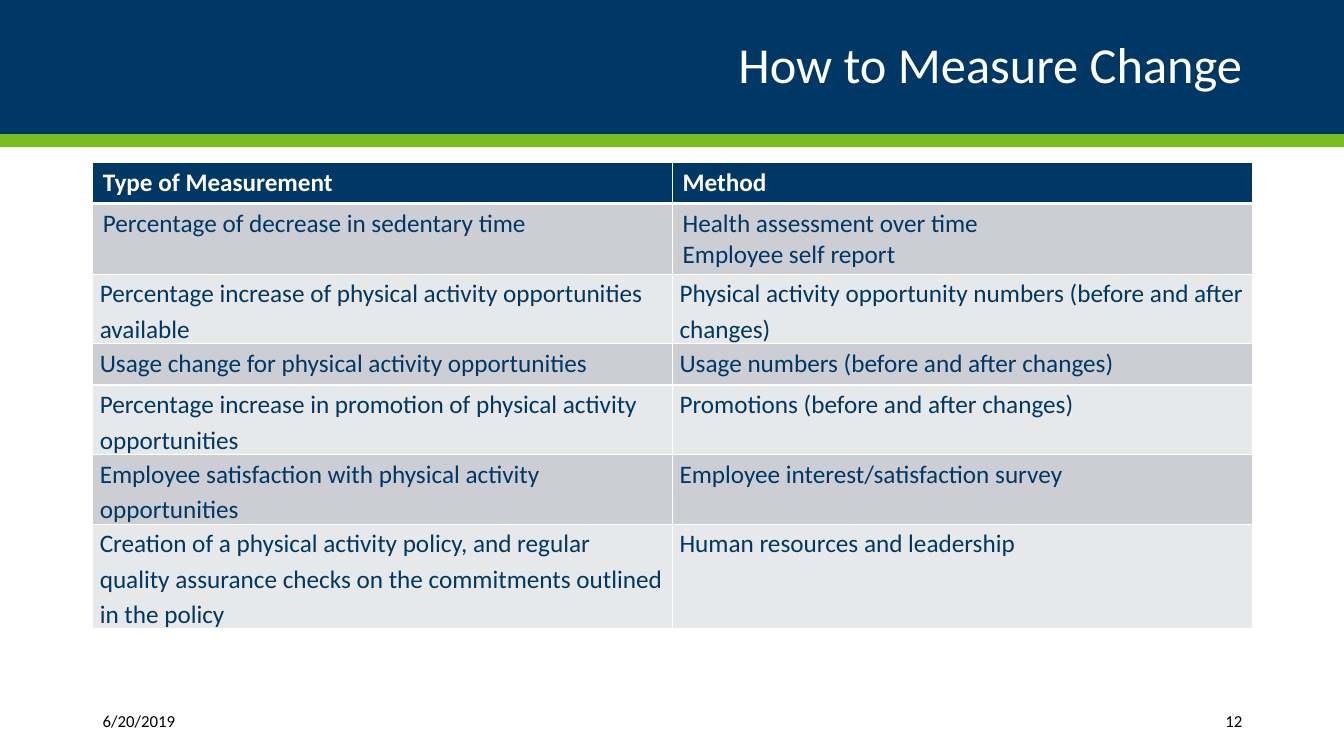
from lxml.etree import SubElement
from pptx import Presentation
from pptx.dml.color import RGBColor
from pptx.enum.shapes import MSO_SHAPE
from pptx.enum.text import MSO_ANCHOR, PP_ALIGN
from pptx.oxml.ns import qn
from pptx.util import Inches, Pt

COLORS = {
    "navy": "003865", "green": "78BE21", "white": "FFFFFF", "black": "000000",
    "band_dark": "CCCED3", "band_light": "E7E8EA",
}
FONT = "Calibri"
MARGIN, CONTENT_WIDTH = 0.92, 11.5
ROW_HEIGHT = 0.41

HEADINGS = ("Type of Measurement", "Method")
MEASURES = [
    ("Percentage of decrease in sedentary time",
     "Health assessment over time\nEmployee self report"),
    ("Percentage increase of physical activity opportunities available",
     "Physical activity opportunity numbers (before and after changes)"),
    ("Usage change for physical activity opportunities",
     "Usage numbers (before and after changes)"),
    ("Percentage increase in promotion of physical activity opportunities",
     "Promotions (before and after changes)"),
    ("Employee satisfaction with physical activity opportunities",
     "Employee interest/satisfaction survey"),
    ("Creation of a physical activity policy, and regular quality assurance "
     "checks on the commitments outlined in the policy",
     "Human resources and leadership"),
]


def rgb(name):
    return RGBColor.from_string(COLORS[name])


def write_text(frame, text, size=18, color="navy", bold=False,
               align=PP_ALIGN.LEFT, line_spacing=None, gap=0):
    """Fill a text frame, one paragraph per line of text."""
    for index, line in enumerate(text.split("\n")):
        paragraph = frame.add_paragraph() if index else frame.paragraphs[0]
        paragraph.alignment = align
        paragraph.line_spacing = line_spacing
        paragraph.space_before = paragraph.space_after = Pt(gap)
        run = paragraph.add_run()
        run.text = line
        run.font.name, run.font.size, run.font.bold = FONT, Pt(size), bold
        run.font.color.rgb = rgb(color)


def add_label(slide, text, left, top, width, height, **text_format):
    label = slide.shapes.add_textbox(
        Inches(left), Inches(top), Inches(width), Inches(height))
    label.text_frame.word_wrap = True
    label.text_frame.vertical_anchor = MSO_ANCHOR.MIDDLE
    write_text(label.text_frame, text, **text_format)


def add_band(slide, left, top, width, height, color):
    band = slide.shapes.add_shape(
        MSO_SHAPE.RECTANGLE, Inches(left), Inches(top), Inches(width), Inches(height))
    band.shadow.inherit = False
    band.fill.solid()
    band.fill.fore_color.rgb = rgb(color)
    band.line.fill.background()


def add_header(slide, left, top, width, height):
    stripe = 0.13
    add_band(slide, left, top, width, height - stripe, "navy")
    add_band(slide, left, top + height - stripe, width, stripe, "green")
    add_label(slide, "How to Measure Change", left + MARGIN, top + 0.17,
              CONTENT_WIDTH, 1, size=36, color="white",
              align=PP_ALIGN.RIGHT, line_spacing=0.9)


def style_cell(cell, fill, top=1, bottom=1):
    """Set the fill and white borders; top and bottom are widths in points."""
    properties = cell._tc.get_or_add_tcPr()
    for side, points in (("L", 1), ("R", 1), ("T", top), ("B", bottom)):
        border = SubElement(properties, qn(f"a:ln{side}"), w=str(Pt(points)))
        solid = SubElement(border, qn("a:solidFill"))
        SubElement(solid, qn("a:srgbClr"), val=COLORS["white"])
    cell.fill.solid()
    cell.fill.fore_color.rgb = rgb(fill)


def add_measures(slide, left, top, width):
    rows = [HEADINGS, *MEASURES]
    table = slide.shapes.add_table(
        len(rows), len(HEADINGS), Inches(left), Inches(top),
        Inches(width), Inches(ROW_HEIGHT * len(rows))).table
    for column in table.columns:
        column.width = Inches(width / len(HEADINGS))
    for row, texts in enumerate(rows):
        table.rows[row].height = Inches(ROW_HEIGHT)
        for column, text in enumerate(texts):
            cell = table.cell(row, column)
            if row == 0:
                style_cell(cell, "navy", bottom=3)
                write_text(cell.text_frame, text, color="white", bold=True)
                continue
            style_cell(cell, "band_dark" if row % 2 else "band_light",
                       top=3 if row == 1 else 1)
            if row == 1:
                write_text(cell.text_frame, text)
            else:
                cell.margin_left = cell.margin_right = Inches(0.07)
                cell.margin_top = cell.margin_bottom = 0
                write_text(cell.text_frame, text, line_spacing=1.15, gap=1)


def add_footer(slide, left, top, width, height):
    number_width = 1.6
    add_label(slide, "6/20/2019", left, top, 1.49, height, size=12, color="black")
    add_label(slide, "12", left + width - number_width, top, number_width, height,
              size=12, color="black", align=PP_ALIGN.RIGHT)


def main():
    deck = Presentation()
    deck.slide_width, deck.slide_height = Inches(13.33), Inches(7.5)
    slide = deck.slides.add_slide(deck.slide_layouts[6])
    add_header(slide, 0, 0, 13.33, 1.46)
    add_measures(slide, MARGIN, 1.61, CONTENT_WIDTH)
    add_footer(slide, MARGIN, 6.95, CONTENT_WIDTH, 0.4)
    deck.save("out.pptx")


if __name__ == "__main__":
    main()
